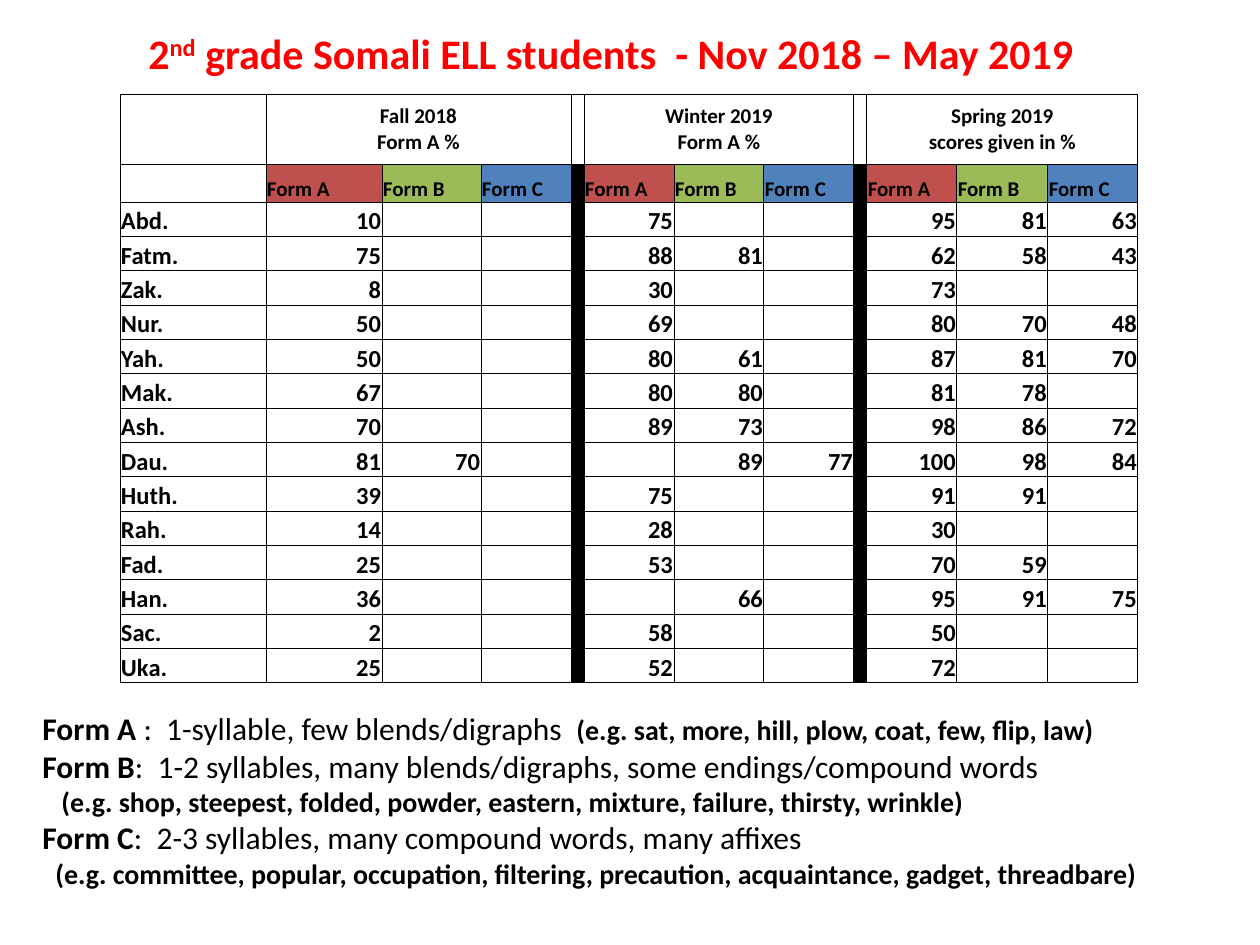
import dataclasses

import lxml.etree
import pptx
import pptx.dml.color
import pptx.enum.text
import pptx.oxml.ns
import pptx.util

ALIGN = pptx.enum.text.PP_ALIGN
ANCHOR = pptx.enum.text.MSO_ANCHOR


@dataclasses.dataclass(frozen=True)
class Theme:
    font: str = "Calibri"
    ink: str = "000000"
    title_ink: str = "FF0000"
    form_fills: tuple = ("C0504D", "9BBB59", "4F81BD")
    title_size: int = 24
    header_size: int = 12
    score_size: int = 14
    note_size: int = 18
    example_size: int = 16
    border_width: float = 0.5


THEME = Theme()
EMU_PER_PX = 914400 / 126

COLUMN_WIDTHS = [146, 116, 99, 90, 13, 90, 90, 90, 13, 90, 91, 90]
HEADER_HEIGHTS = [70, 38]
BODY_HEIGHT = 481
SPACER_COLUMNS = (4, 8)
FORMS = ("Form A", "Form B", "Form C")
TERMS = {
    1: "Fall 2018\vForm A %",
    5: "Winter 2019\vForm A %",
    9: "Spring 2019\vscores given in %",
}
SCORES = [
    ("Abd.", (10,), (75,), (95, 81, 63)),
    ("Fatm.", (75,), (88, 81), (62, 58, 43)),
    ("Zak.", (8,), (30,), (73,)),
    ("Nur.", (50,), (69,), (80, 70, 48)),
    ("Yah.", (50,), (80, 61), (87, 81, 70)),
    ("Mak.", (67,), (80, 80), (81, 78)),
    ("Ash.", (70,), (89, 73), (98, 86, 72)),
    ("Dau.", (81, 70), ("", 89, 77), (100, 98, 84)),
    ("Huth.", (39,), (75,), (91, 91)),
    ("Rah.", (14,), (28,), (30,)),
    ("Fad.", (25,), (53,), (70, 59)),
    ("Han.", (36,), ("", 66), (95, 91, 75)),
    ("Sac.", (2,), (58,), (50,)),
    ("Uka.", (25,), (52,), (72,)),
]

TITLE = [("2", False), ("nd", True), (" grade Somali ELL students  - Nov 2018 – May 2019", False)]
NAME = (THEME.note_size, True)
RULE = (THEME.note_size, False)
EXAMPLE = (THEME.example_size, True)
NOTES = [
    (0, [("Form A ", NAME), (":  1-syllable, few blends/digraphs  ", RULE),
         ("(e.g. sat, more, hill, plow, coat, few, flip, law)", EXAMPLE)]),
    (0, [("Form B", NAME),
         (":  1-2 syllables, many blends/digraphs, some endings/compound words", RULE)]),
    (19, [("(e.g. shop, steepest, folded, powder, eastern, mixture, failure, thirsty, wrinkle)",
           EXAMPLE)]),
    (0, [("Form C", NAME), (":  2-3 syllables, many compound words, many affixes", RULE)]),
    (13, [("(e.g. committee, popular, occupation, filtering, precaution, "
           "acquaintance, gadget, threadbare)", EXAMPLE)]),
]


def px(length):
    return pptx.util.Emu(round(length * EMU_PER_PX))


def set_font(font, color, size=None, bold=None):
    font.name = THEME.font
    font.color.rgb = pptx.dml.color.RGBColor.from_string(color)
    if size is not None:
        font.size = pptx.util.Pt(size)
    font.bold = bold


def add_box(page, left, top, width, height):
    box = page.shapes.add_textbox(px(left), px(top), px(width), px(height))
    box.text_frame.word_wrap = True
    box.text_frame.auto_size = pptx.enum.text.MSO_AUTO_SIZE.SHAPE_TO_FIT_TEXT
    return box.text_frame


def add_title(page):
    para = add_box(page, 136, 21, 1008, 63).paragraphs[0]
    set_font(para.font, THEME.title_ink, THEME.title_size, True)
    for text, raised in TITLE:
        span = para.add_run()
        span.text = text
        if raised:
            span.font._element.set("baseline", "30000")


def add_notes(page):
    frame = add_box(page, 30, 703, 1197, 195)
    for index, (indent, spans) in enumerate(NOTES):
        para = frame.add_paragraph() if index else frame.paragraphs[0]
        if indent:
            para._p.get_or_add_pPr().set("marL", str(px(indent)))
        set_font(para.font, THEME.ink)
        for text, (size, bold) in spans:
            span = para.add_run()
            span.text = text
            span.font.size = pptx.util.Pt(size)
            span.font.bold = bold


def add_borders(cell):
    properties = cell._tc.get_or_add_tcPr()
    qn = pptx.oxml.ns.qn
    for index, side in enumerate(("a:lnL", "a:lnR", "a:lnT", "a:lnB")):
        line = lxml.etree.Element(qn(side), w=str(pptx.util.Pt(THEME.border_width)))
        fill = lxml.etree.SubElement(line, qn("a:solidFill"))
        lxml.etree.SubElement(fill, qn("a:srgbClr"), val=THEME.ink)
        properties.insert(index, line)


def style_cell(cell, text, size, align, anchor, fill):
    cell.margin_left = cell.margin_right = cell.margin_top = px(1)
    cell.margin_bottom = 0
    cell.vertical_anchor = anchor
    if fill:
        cell.fill.solid()
        cell.fill.fore_color.rgb = pptx.dml.color.RGBColor.from_string(fill)
    else:
        cell.fill.background()
    add_borders(cell)
    para = cell.text_frame.paragraphs[0]
    para.text = text
    para.alignment = align
    set_font(para.font, THEME.ink, size, True)
    if not text:
        end = pptx.oxml.ns.qn("a:endParaRPr")
        lxml.etree.SubElement(para._p, end, sz=str(size * 100))


def score_row(name, *terms):
    row = [name]
    for index, scores in enumerate(terms):
        if index:
            row.append("")
        row += [str(score) for score in scores] + [""] * (len(FORMS) - len(scores))
    return row


def add_score_table(page):
    rows = [
        [TERMS.get(column, "") for column in range(len(COLUMN_WIDTHS))],
        score_row("", FORMS, FORMS, FORMS),
    ] + [score_row(*student) for student in SCORES]
    heights = HEADER_HEIGHTS + [BODY_HEIGHT / len(SCORES)] * len(SCORES)
    table = page.shapes.add_table(
        len(rows), len(COLUMN_WIDTHS), px(120), px(94),
        px(sum(COLUMN_WIDTHS)), px(sum(heights))).table
    table.first_row = table.horz_banding = False
    for column, width in zip(table.columns, COLUMN_WIDTHS):
        column.width = px(width)
    for row, height in zip(table.rows, heights):
        row.height = px(height)
    fills = dict(zip(FORMS, THEME.form_fills))
    for r, texts in enumerate(rows):
        size = THEME.header_size if r < len(HEADER_HEIGHTS) else THEME.score_size
        anchor = ANCHOR.BOTTOM if r else ANCHOR.MIDDLE
        for c, text in enumerate(texts):
            align = ALIGN.CENTER if r == 0 else ALIGN.RIGHT if r > 1 and c else ALIGN.LEFT
            fill = THEME.ink if r and c in SPACER_COLUMNS else fills.get(text)
            style_cell(table.cell(r, c), text, size, align, anchor, fill)
    for first in TERMS:
        table.cell(0, first).merge(table.cell(0, first + len(FORMS) - 1))


def main():
    deck = pptx.Presentation()
    deck.slide_width, deck.slide_height = px(1260), px(945)
    page = deck.slides.add_slide(deck.slide_layouts[6])
    add_title(page)
    add_score_table(page)
    add_notes(page)
    deck.save("out.pptx")


if __name__ == "__main__":
    main()
